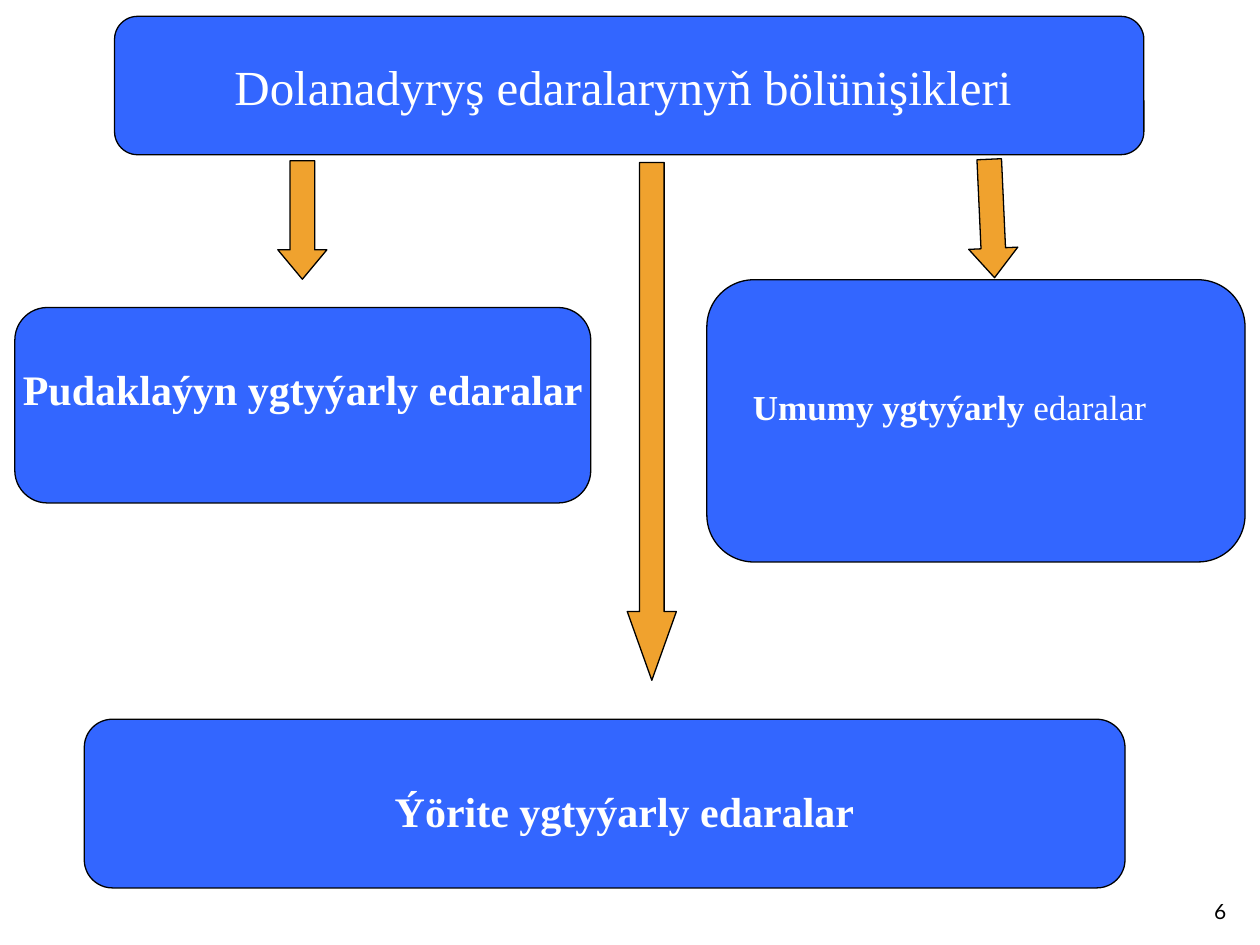
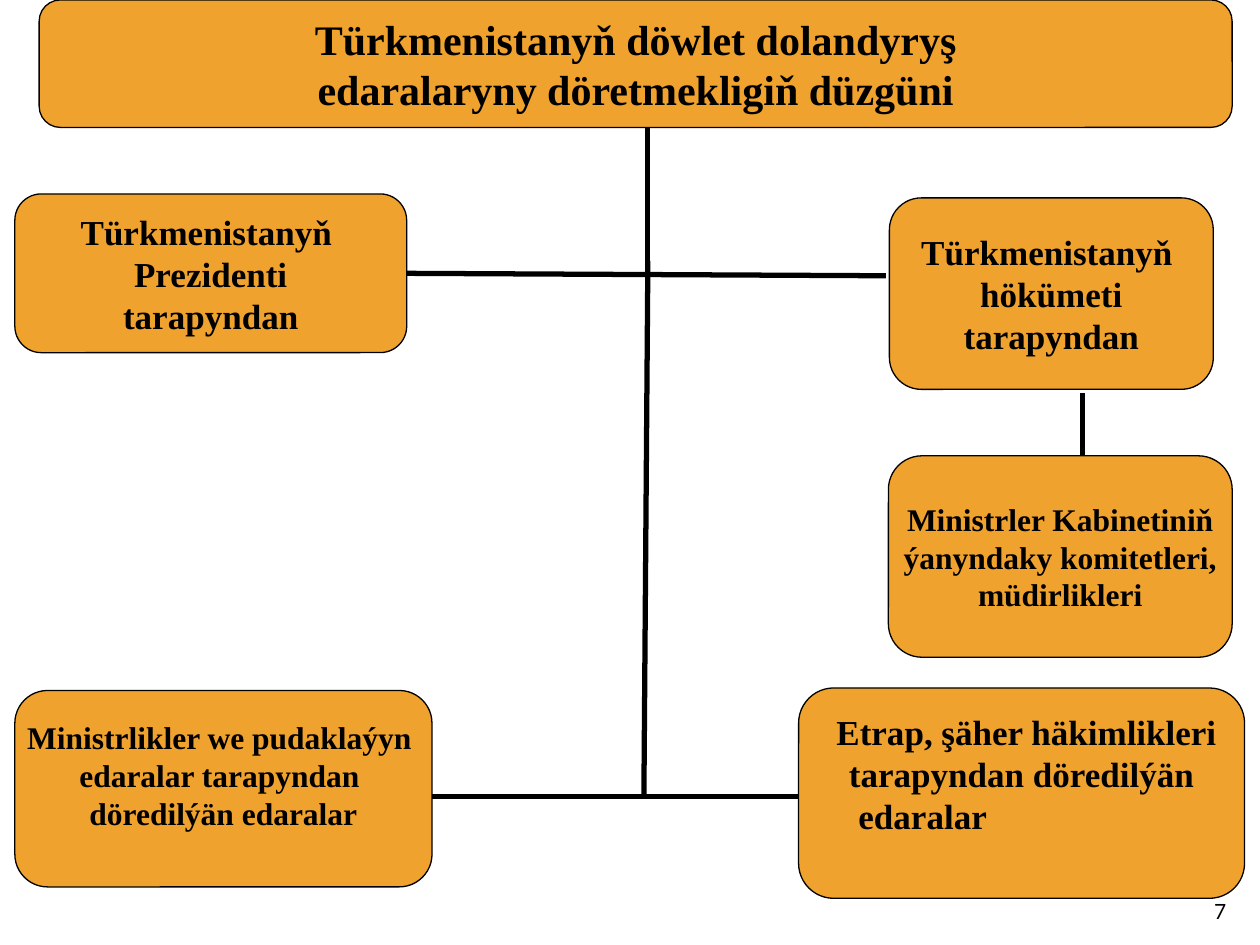
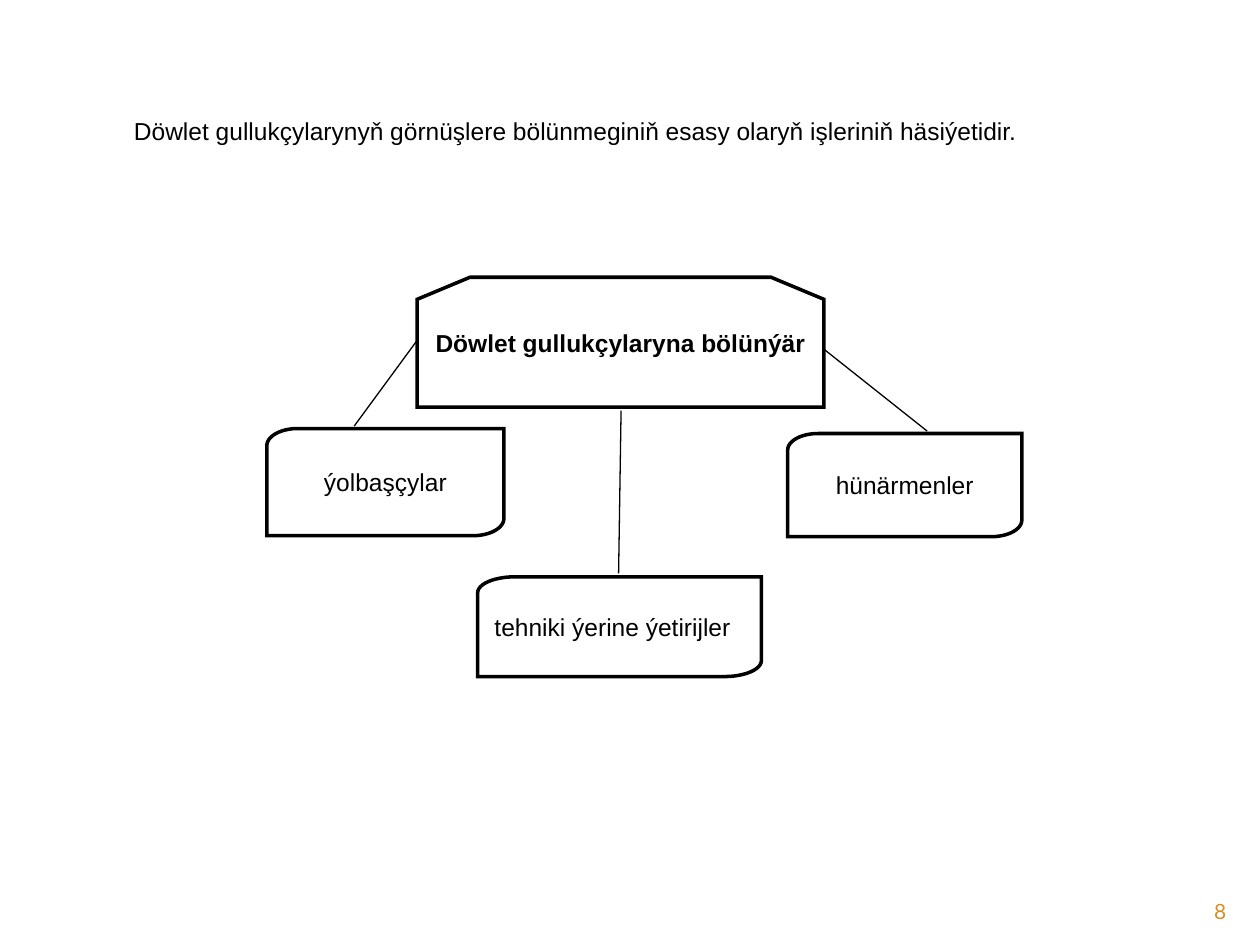
from math import cos, pi, sin

from lxml.etree import SubElement
from pptx import Presentation
from pptx.dml.color import RGBColor
from pptx.enum.shapes import MSO_CONNECTOR, MSO_SHAPE
from pptx.enum.text import MSO_ANCHOR, MSO_AUTO_SIZE, PP_ALIGN
from pptx.oxml.ns import qn
from pptx.util import Cm, Pt

COLORS = {"blue": "3366FF", "orange": "F0A22E", "black": "000000",
          "white": "FFFFFF", "amber": "D48F29"}
SERIF, SANS, NUMBER_FONT = "Times New Roman", "Arial", "Lato"
CENTER, LEFT, RIGHT = PP_ALIGN.CENTER, PP_ALIGN.LEFT, PP_ALIGN.RIGHT


def color(name):
    return RGBColor.from_string(COLORS[name])


def write(shape, lines, size, ink, font=SERIF, bold=False, align=CENTER,
          insets=(0, 0, 0, 0), wrap=True):
    """Fill a shape with lines, each a list of (text, bold) runs or a plain string.

    Insets are left, top, right and bottom in centimetres.
    """
    frame = shape.text_frame
    frame.word_wrap = wrap
    frame.auto_size = MSO_AUTO_SIZE.NONE
    frame.vertical_anchor = MSO_ANCHOR.MIDDLE
    (frame.margin_left, frame.margin_top,
     frame.margin_right, frame.margin_bottom) = [Cm(inset) for inset in insets]
    for index, line in enumerate(lines):
        para = frame.add_paragraph() if index else frame.paragraphs[0]
        para.alignment = align
        for text, heavy in ([(line, bold)] if isinstance(line, str) else line):
            run = para.add_run()
            run.text = text
            run.font.name = font
            run.font.size = Pt(size)
            run.font.bold = heavy
            run.font.color.rgb = color(ink)


deck = Presentation()
deck.slide_width, deck.slide_height = Cm(25.4), Cm(19.05)
title_only = deck.slide_layouts[5]
divisions, formation, servants = [deck.slides.add_slide(title_only) for _ in range(3)]

# Rounded boxes of the first two slides; the first box of each carries the title
# (place, lines, size, bold, alignment, insets)
division_boxes = [
    ((2.31, 0.33, 20.75, 2.79), ["Dolanadyryş edaralarynyň bölünişikleri"],
     28, False, CENTER, (0, 0.03, 0.25, 0)),
    ((1.7, 14.5, 20.98, 3.4), ["Ýörite ygtyýarly edaralar"],
     24, True, CENTER, (0.8, 0.28, 0, 0)),
    ((0.3, 6.2, 11.61, 3.94), ["Pudaklaýyn ygtyýarly edaralar"],
     24, True, CENTER, (0, 0, 0, 0.66)),
    ((14.25, 5.64, 10.85, 5.69), [[("Umumy ygtyýarly ", True), ("edaralar", False)]],
     20, True, LEFT, (0.65, 0, 0, 0.56)),
]
formation_boxes = [
    ((0.79, 0, 24.05, 2.57),
     ["Türkmenistanyň döwlet dolandyryş", "edaralaryny döretmekligiň düzgüni"],
     24, True, CENTER, (0, 0, 0, 0)),
    ((0.3, 3.91, 7.9, 3.2), ["Türkmenistanyň ", "Prezidenti", "tarapyndan"],
     20, True, CENTER, (0, 0, 0, 0)),
    ((17.93, 3.99, 6.53, 3.86), ["Türkmenistanyň ", "hökümeti", "tarapyndan"],
     20, True, CENTER, (0, 0, 0, 0)),
    ((17.91, 9.19, 6.93, 4.06),
     ["Ministrler Kabinetiniň", "ýanyndaky komitetleri,", "müdirlikleri"],
     18, True, CENTER, (0, 0, 0, 0)),
    ((0.3, 13.92, 8.41, 3.96),
     ["Ministrlikler we pudaklaýyn ", "edaralar tarapyndan ", "döredilýän edaralar"],
     18, True, CENTER, (0, 0, 0, 0.55)),
    ((16.1, 13.87, 8.99, 4.24),
     ["Etrap, şäher häkimlikleri", "tarapyndan döredilýän", "edaralar"],
     20, True, CENTER, (0, 0, 0, 0.8)),
]
for page, boxes, fill, ink in ((divisions, division_boxes, "blue", "white"),
                               (formation, formation_boxes, "orange", "black")):
    for index, (place, lines, size, bold, align, insets) in enumerate(boxes):
        place = [Cm(length) for length in place]
        box = page.shapes.add_shape(MSO_SHAPE.ROUNDED_RECTANGLE, *place)
        box.shadow.inherit = False
        box.fill.solid()
        box.fill.fore_color.rgb = color(fill)
        box.line.color.rgb = color("black")
        box.line.width = Pt(0.75)
        holder = box
        if index == 0:
            holder = page.shapes.title
            holder.left, holder.top, holder.width, holder.height = place
            box.element.addnext(holder.element)
        write(holder, lines, size, ink, bold=bold, align=align, insets=insets,
              wrap=len(lines) > 1 or align == LEFT)

# The lines of the district box are staggered
district_lines = box.text_frame.paragraphs
district_lines[-1].alignment = LEFT
for para, indent in ((district_lines[0], 0.2), (district_lines[-1], 1)):
    para._p.get_or_add_pPr().set("marL", str(Cm(indent)))

# Arrows turned downwards: left, top, length, rotation, head ratio
for left, top, length, rotation, head in ((18.8, 3.91, 2.39, 87.4, 0.6),
                                          (4.9, 3.94, 2.39, 90, 0.6),
                                          (7.92, 8, 10.44, 90, 1.4)):
    arrow = divisions.shapes.add_shape(MSO_SHAPE.RIGHT_ARROW, Cm(left), Cm(top),
                                       Cm(length), Cm(0.99))
    arrow.shadow.inherit = False
    arrow.rotation = rotation
    arrow.adjustments[0], arrow.adjustments[1] = 0.5, head
    arrow.fill.solid()
    arrow.fill.fore_color.rgb = color("orange")
    arrow.line.color.rgb = color("black")
    arrow.line.width = Pt(0.75)

# Kinds of civil servants
heading = servants.shapes.title
heading.left, heading.top, heading.width, heading.height = Cm(2.7), Cm(2), Cm(21), Cm(1.27)
write(heading,
      ["Döwlet gullukçylarynyň görnüşlere bölünmeginiň esasy olaryň işleriniň häsiýetidir."],
      14, "black", SANS, align=LEFT)

# Corners in fractions of the box: two cut ones, or two opposite round ones
cut_corners = [(0.13, 0), (0.87, 0), (1, 0.17), (1, 1), (0, 1), (0, 0.17)]
arc = [(0.13 * (1 - cos(step * pi / 24)), 0.16 * (1 - sin(step * pi / 24)))
       for step in range(13)]
round_corners = arc + [(1, 0)] + [(1 - x, 1 - y) for x, y in arc] + [(0, 1)]

for (left, top, width, height), corners, text, bold, right_inset in (
        ((15.88, 8.74, 4.72, 2.08), round_corners, "hünärmenler", False, 0.25),
        ((9.63, 11.63, 5.72, 2.01), round_corners, "tehniki ýerine ýetirijler", False, 0.53),
        ((5.38, 8.64, 4.78, 2.16), round_corners, "ýolbaşçylar", False, 0.25),
        ((8.41, 5.59, 8.2, 2.62), cut_corners, "Döwlet gullukçylaryna bölünýär", True, 0.25)):
    points = [(Cm(left + x * width), Cm(top + y * height)) for x, y in corners]
    builder = servants.shapes.build_freeform(*points[0])
    builder.add_line_segments(points[1:], close=True)
    card = builder.convert_to_shape()
    card.shadow.inherit = False
    card.fill.solid()
    card.fill.fore_color.rgb = color("white")
    card.line.color.rgb = color("black")
    card.line.width = Pt(2)
    SubElement(card.element.spPr.find(qn("a:ln")), qn("a:miter"), lim="800000")
    write(card, [text], 14, "black", SANS, bold, insets=(0.25, 0.13, right_inset, 0.13))

# Connecting lines
formation_links = [(8.2, 5.51, 17.86, 5.56), (21.82, 7.92, 21.82, 9.19),
                   (13.06, 2.57, 13.06, 5.26), (13.06, 5.26, 12.98, 16.05),
                   (8.71, 16.05, 16.1, 16.05)]
servant_links = [(8.41, 6.86, 7.14, 8.59), (16.61, 7.04, 18.69, 8.69),
                 (12.52, 8.28, 12.47, 11.56)]
for page, links, weight in ((formation, formation_links, 3), (servants, servant_links, 0.75)):
    for ends in links:
        link = page.shapes.add_connector(MSO_CONNECTOR.STRAIGHT, *[Cm(end) for end in ends])
        link.line.color.rgb = color("black")
        link.line.width = Pt(weight)
        SubElement(link.element.spPr, qn("a:effectLst"))

# Page numbers
for number, (page, ink) in enumerate(
        ((divisions, "black"), (formation, "black"), (servants, "amber")), start=6):
    number_box = page.shapes.add_textbox(Cm(22.86), Cm(17.98), Cm(2.11), Cm(0.69))
    write(number_box, [str(number)], 12, ink, NUMBER_FONT, align=RIGHT,
          insets=(0.25, 0.13, 0.25, 0.05))

deck.save("out.pptx")
